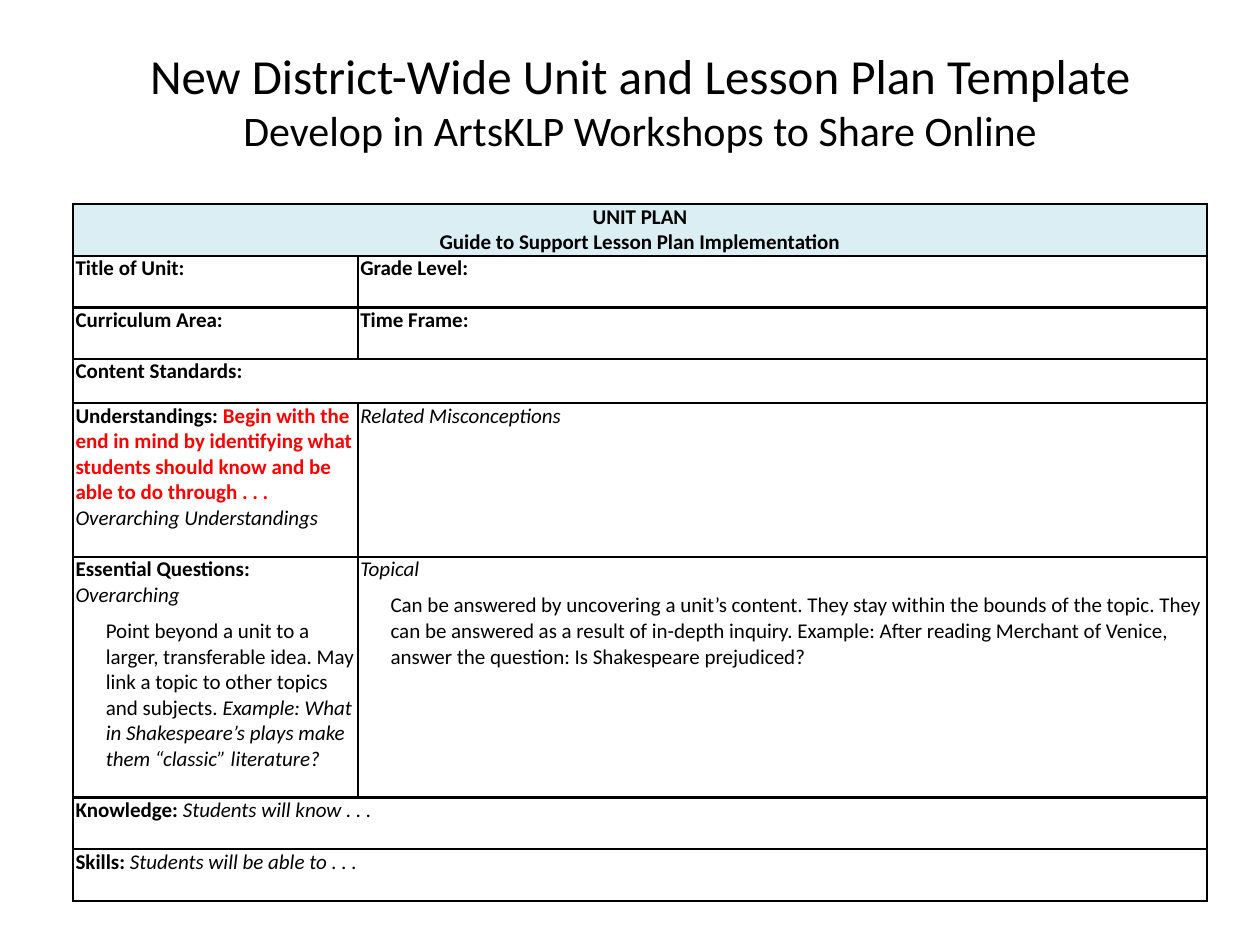
from itertools import product
from pptx import Presentation
from pptx.dml.color import RGBColor as RGB
from pptx.enum.text import MSO_ANCHOR as Anchor, PP_ALIGN as Align
from pptx.oxml import parse_xml
from pptx.oxml.ns import nsdecls
from pptx.util import Inches, Pt

THEME = {
    "font": "Calibri", "title": 28, "subtitle": 24, "body": 12, "border": 1.5,
    "ink": "000000", "accent": "FF0000", "header": "DAEEF3", "paper": "FFFFFF",
}

# Content: a run is (text, style); a paragraph is a list of runs
BOLD, ITALIC, PLAIN = {"bold": True}, {"italic": True}, {}
PROMPT = {"bold": True, "color": THEME["accent"]}

HEADING = [("New District-Wide Unit and Lesson Plan Template", THEME["title"]),
           ("Develop in ArtsKLP Workshops to Share Online", THEME["subtitle"])]

# Each row: height, then one cell (full width) or two cells
UNIT_PLAN = [
    (0.41, [[[("UNIT PLAN", BOLD)],
             [("Guide to Support Lesson Plan Implementation", BOLD)]]]),
    (0.41, [[[("Title of Unit:", BOLD)]], [[("Grade Level:", BOLD)]]]),
    (0.41, [[[("Curriculum Area:", BOLD)]], [[("Time Frame:", BOLD)]]]),
    (0.35, [[[("Content Standards:", BOLD)]]]),
    (1.22, [[[("Understandings: ", BOLD),
              ("Begin with the end in mind by identifying what students should "
               "know and be able to do through . . . ", PROMPT),
              ("Overarching Understandings", ITALIC)]],
            [[("Related Misconceptions", ITALIC)]]]),
    (1.91, [[[("Essential Questions:", BOLD), (" Overarching", ITALIC)],
             [("Point beyond a unit to a larger, transferable idea. May link a "
               "topic to other topics and subjects.", PLAIN),
              (" Example: What in Shakespeare’s plays make them “classic” "
               "literature?", ITALIC)]],
            [[("Topical", ITALIC)],
             [("Can be answered by uncovering a unit’s content. They stay within "
               "the bounds of the topic. They can be answered as a result of "
               "in-depth inquiry. Example: After reading Merchant of Venice, "
               "answer the question: Is Shakespeare prejudiced?", PLAIN)]]]),
    (0.41, [[[("Knowledge: ", BOLD), ("Students will know . . .", ITALIC)]]]),
    (0.41, [[[("Skills: ", BOLD), ("Students will be able to . . .", ITALIC)]]]),
]
COLUMNS = [2.26, 6.74]
LEFT, WIDTH = 0.58, sum(COLUMNS)
HEADER_ROW, QUESTIONS_ROW = 0, 5


def add_text(paragraph, text, size=THEME["body"], bold=False, italic=False,
             color=THEME["ink"]):
    run = paragraph.add_run()
    run.text = text
    font = run.font
    font.name, font.size, font.bold, font.italic = THEME["font"], Pt(size), bold, italic
    font.color.rgb = RGB.from_string(color)


def add_border(cell):
    properties = cell._tc.get_or_add_tcPr()
    for side in "LRTB":
        properties.append(parse_xml(
            f'<a:ln{side} {nsdecls("a")} w="{Pt(THEME["border"])}"><a:solidFill>'
            f'<a:srgbClr val="{THEME["ink"]}"/></a:solidFill></a:ln{side}>'))


def fill_cell(cell, paragraphs, row):
    frame = cell.text_frame
    for index, runs in enumerate(paragraphs):
        paragraph = frame.add_paragraph() if index else frame.paragraphs[0]
        paragraph.alignment = Align.CENTER if row == HEADER_ROW else Align.LEFT
        if row == QUESTIONS_ROW:
            if index:  # explanation under the question type
                paragraph._p.get_or_add_pPr().set("marL", str(Inches(0.24)))
            else:
                paragraph.space_after = Pt(6)
        for text, style in runs:
            add_text(paragraph, text, **style)


def main():
    prs = Presentation()
    prs.slide_width, prs.slide_height = Inches(10), Inches(7.5)
    slide = prs.slides.add_slide(prs.slide_layouts[6])

    # Heading
    heading = slide.shapes.add_textbox(
        Inches(LEFT), Inches(0.17), Inches(WIDTH), Inches(1.25)).text_frame
    heading.word_wrap = True
    heading.vertical_anchor = Anchor.MIDDLE
    line = heading.paragraphs[0]
    line.alignment = Align.CENTER
    for index, (text, size) in enumerate(HEADING):
        if index:
            line.add_line_break()
        add_text(line, text, size=size)

    # Unit plan table
    height = sum(row_height for row_height, _ in UNIT_PLAN)
    plan = slide.shapes.add_table(
        len(UNIT_PLAN), len(COLUMNS), Inches(LEFT), Inches(1.62),
        Inches(WIDTH), Inches(height)).table
    plan.first_row = plan.horz_banding = False
    for column, width in zip(plan.columns, COLUMNS):
        column.width = Inches(width)

    # Cell format
    for row, column in product(range(len(UNIT_PLAN)), range(len(COLUMNS))):
        cell = plan.cell(row, column)
        cell.margin_left = cell.margin_right = Inches(0.02)
        cell.margin_top = cell.margin_bottom = 0
        add_border(cell)
        cell.fill.solid()
        cell.fill.fore_color.rgb = RGB.from_string(
            THEME["header" if row == HEADER_ROW else "paper"])

    # Cell text
    for row, (row_height, cells) in enumerate(UNIT_PLAN):
        plan.rows[row].height = Inches(row_height)
        if len(cells) == 1:
            plan.cell(row, 0).merge(plan.cell(row, len(COLUMNS) - 1))
        for column, paragraphs in enumerate(cells):
            fill_cell(plan.cell(row, column), paragraphs, row)

    prs.save("out.pptx")


if __name__ == "__main__":
    main()
